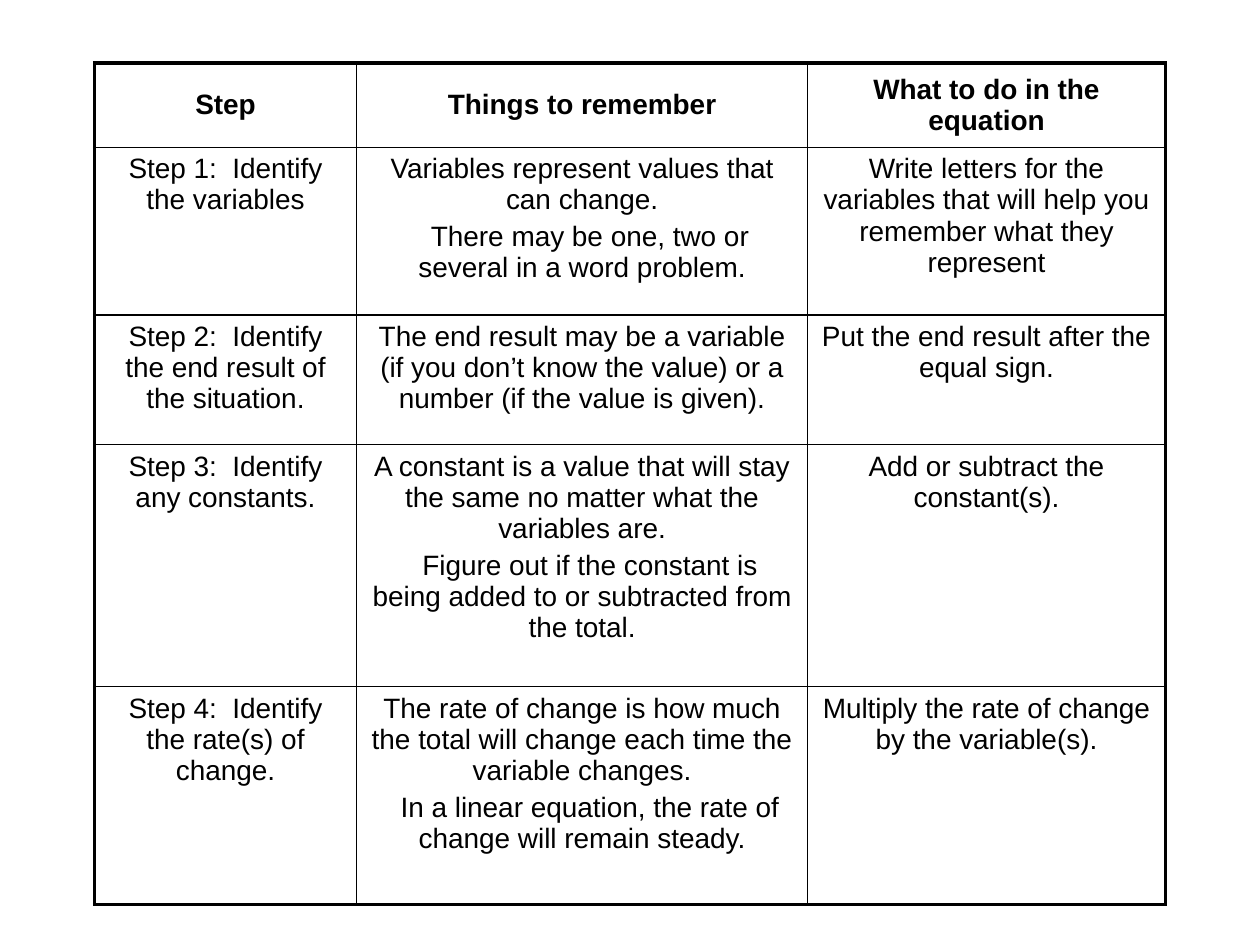
from dataclasses import dataclass

from pptx import Presentation
from pptx.dml.color import RGBColor
from pptx.enum.text import MSO_ANCHOR as Anchor, PP_ALIGN as Align
from pptx.oxml.ns import qn
from pptx.util import Inches, Pt
from lxml.etree import SubElement


@dataclass(frozen=True)
class Theme:
    font: str = "Arial"
    ink: str = "000000"
    size: float = 16
    paragraph_gap: float = 3.2
    first_indent: float = 9
    outer_line: float = 2.25
    inner_line: float = 1


theme = Theme()


def write(cell, paragraphs, bold=False, anchor=Anchor.TOP):
    """Fill a cell with centred paragraphs; those after the first are indented."""
    cell.vertical_anchor = anchor
    frame = cell.text_frame
    for index, text in enumerate(paragraphs):
        paragraph = frame.add_paragraph() if index else frame.paragraphs[0]
        paragraph.alignment = Align.CENTER
        paragraph.space_before = Pt(theme.paragraph_gap)
        if index:
            paragraph._p.get_or_add_pPr().set("indent", str(Pt(theme.first_indent)))
        run = paragraph.add_run()
        run.text = text
        run.font.name = theme.font
        run.font.size = Pt(theme.size)
        run.font.bold = bold
        run.font.color.rgb = RGBColor.from_string(theme.ink)


def draw_border(cell, side, width):
    line = SubElement(cell._tc.get_or_add_tcPr(), qn(f"a:ln{side}"), w=str(Pt(width)))
    fill = SubElement(line, qn("a:solidFill"))
    SubElement(fill, qn("a:srgbClr"), val=theme.ink)


column_widths = [2.08, 3.58, 2.84]
row_heights = [0.67, 1.33, 1.03, 1.92, 1.73]
rows = [
    [["Step"], ["Things to remember"], ["What to do in the equation"]],
    [
        ["Step 1:  Identify the variables"],
        ["Variables represent values that can change.",
         "There may be one, two or several in a word problem."],
        ["Write letters for the variables that will help you remember what they represent"],
    ],
    [
        ["Step 2:  Identify the end result of the situation."],
        ["The end result may be a variable (if you don’t know the value) "
         "or a number (if the value is given)."],
        ["Put the end result after the equal sign."],
    ],
    [
        ["Step 3:  Identify any constants."],
        ["A constant is a value that will stay the same no matter what the variables are.",
         "Figure out if the constant is being added to or subtracted from the total."],
        ["Add or subtract the constant(s)."],
    ],
    [
        ["Step 4:  Identify the rate(s) of change."],
        ["The rate of change is how much the total will change each time the variable changes.",
         "In a linear equation, the rate of change will remain steady."],
        ["Multiply the rate of change by the variable(s)."],
    ],
]

presentation = Presentation()
presentation.slide_width = Inches(10)
presentation.slide_height = Inches(7.5)
slide = presentation.slides.add_slide(presentation.slide_layouts[6])

table = slide.shapes.add_table(
    len(rows), len(column_widths), Inches(0.75), Inches(0.5),
    Inches(sum(column_widths)), Inches(sum(row_heights)),
).table
table.first_row = False
table.horz_banding = False
for column, width in zip(table.columns, column_widths):
    column.width = Inches(width)
for row, height in zip(table.rows, row_heights):
    row.height = Inches(height)

last_row, last_column = len(rows) - 1, len(column_widths) - 1
for row_index, row_texts in enumerate(rows):
    is_header = row_index == 0
    for column_index, paragraphs in enumerate(row_texts):
        cell = table.cell(row_index, column_index)
        write(cell, paragraphs, bold=is_header,
              anchor=Anchor.MIDDLE if is_header else Anchor.TOP)
        on_edge = {
            "L": column_index == 0,
            "R": column_index == last_column,
            "T": row_index == 0,
            "B": row_index == last_row,
        }
        for side, is_outer in on_edge.items():
            draw_border(cell, side, theme.outer_line if is_outer else theme.inner_line)
        cell.fill.background()

presentation.save("out.pptx")
